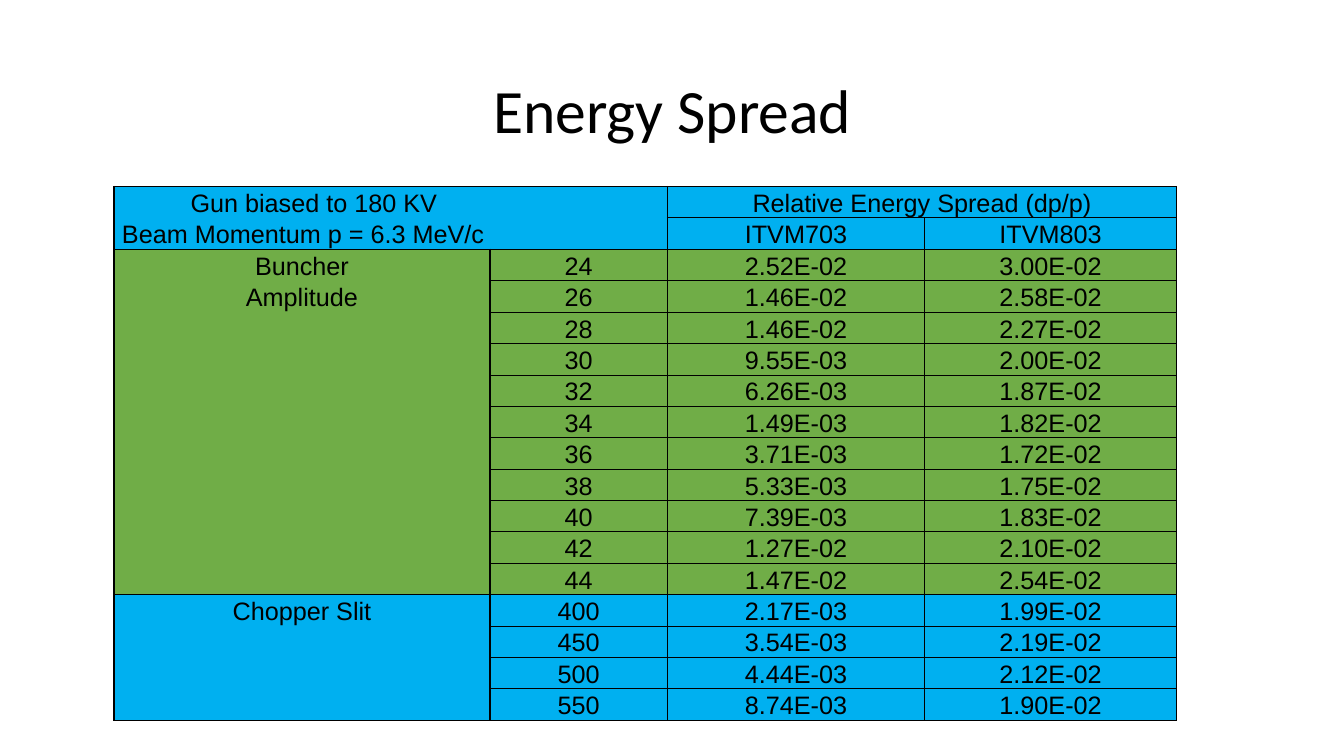
from dataclasses import dataclass

from lxml import etree
from pptx import Presentation
from pptx.dml.color import RGBColor
from pptx.enum.text import MSO_ANCHOR, PP_ALIGN
from pptx.oxml.ns import qn
from pptx.slide import Slide
from pptx.table import Table, _Cell
from pptx.util import Inches, Pt

LEFT, CENTER = PP_ALIGN.LEFT, PP_ALIGN.CENTER
MIDDLE, BOTTOM = MSO_ANCHOR.MIDDLE, MSO_ANCHOR.BOTTOM

BLACK = RGBColor(0x00, 0x00, 0x00)
BLUE = RGBColor(0x00, 0xB0, 0xF0)
GREEN = RGBColor(0x70, 0xAD, 0x47)

NONE, THIN, THICK = 0, 0.5, 1
COLUMN_WIDTHS = (3.73, 1.76, 2.55, 2.5)
TABLE_HEIGHT = 5.3
HEADER_ROWS = 2
CELL_MARGIN = 0.01


@dataclass(frozen=True)
class Borders:
    """Line widths in points, in the order the file format requires."""
    left: float = NONE
    right: float = NONE
    top: float = NONE
    bottom: float = NONE


@dataclass(frozen=True)
class Section:
    label_lines: tuple[str, ...]
    color: RGBColor
    rows: tuple[tuple[str, str, str], ...]


SECTIONS = (
    Section(("Buncher", "Amplitude"), GREEN, (
        ("24", "2.52E-02", "3.00E-02"),
        ("26", "1.46E-02", "2.58E-02"),
        ("28", "1.46E-02", "2.27E-02"),
        ("30", "9.55E-03", "2.00E-02"),
        ("32", "6.26E-03", "1.87E-02"),
        ("34", "1.49E-03", "1.82E-02"),
        ("36", "3.71E-03", "1.72E-02"),
        ("38", "5.33E-03", "1.75E-02"),
        ("40", "7.39E-03", "1.83E-02"),
        ("42", "1.27E-02", "2.10E-02"),
        ("44", "1.47E-02", "2.54E-02"),
    )),
    Section(("Chopper Slit",), BLUE, (
        ("400", "2.17E-03", "1.99E-02"),
        ("450", "3.54E-03", "2.19E-02"),
        ("500", "4.44E-03", "2.12E-02"),
        ("550", "8.74E-03", "1.90E-02"),
    )),
)
ROW_COUNT = HEADER_ROWS + sum(len(section.rows) for section in SECTIONS)


def set_borders(cell: _Cell, borders: Borders) -> None:
    properties = cell._tc.get_or_add_tcPr()
    sides = (("a:lnL", borders.left), ("a:lnR", borders.right),
             ("a:lnT", borders.top), ("a:lnB", borders.bottom))
    for tag, width in sides:
        line = etree.SubElement(properties, qn(tag), w=str(Pt(width)))
        if width == NONE:
            etree.SubElement(line, qn("a:noFill"))
        else:
            fill = etree.SubElement(line, qn("a:solidFill"))
            etree.SubElement(fill, qn("a:srgbClr"), val=str(BLACK))


def fill_cell(cell: _Cell, text: str, color: RGBColor, borders: Borders,
              alignment: PP_ALIGN = CENTER, left_margin: float = CELL_MARGIN) -> None:
    set_borders(cell, borders)
    cell.fill.solid()
    cell.fill.fore_color.rgb = color
    cell.vertical_anchor = BOTTOM
    cell.margin_left = Inches(left_margin)
    cell.margin_right = cell.margin_top = Inches(CELL_MARGIN)
    cell.margin_bottom = 0
    cell.text = text
    paragraph = cell.text_frame.paragraphs[0]
    paragraph.alignment = alignment
    paragraph.font.name = "Arial"
    paragraph.font.size = Pt(18)
    paragraph.font.color.rgb = BLACK


def add_title(slide: Slide) -> None:
    box = slide.shapes.add_textbox(Inches(0.92), Inches(0.4), Inches(11.5), Inches(1.45))
    frame = box.text_frame
    frame.word_wrap = True
    frame.vertical_anchor = MIDDLE
    paragraph = frame.paragraphs[0]
    paragraph.text = "Energy Spread"
    paragraph.alignment = CENTER
    paragraph.line_spacing = 0.9
    paragraph.font.name = "Calibri"
    paragraph.font.size = Pt(44)
    paragraph.font.color.rgb = BLACK


def fill_header(table: Table) -> None:
    conditions = Borders(left=THICK, right=THICK, top=THICK)
    spread = Borders(THICK, THICK, THICK, THICK)
    fill_cell(table.cell(0, 0), "Gun biased to 180 KV", BLUE, conditions, LEFT, 0.76)
    fill_cell(table.cell(0, 1), "", BLUE, conditions)
    fill_cell(table.cell(0, 2), "Relative Energy Spread (dp/p)", BLUE, spread)
    fill_cell(table.cell(0, 3), "", BLUE, spread)
    for column in (0, 2):
        table.cell(0, column).merge(table.cell(0, column + 1))

    fill_cell(table.cell(1, 0), "Beam Momentum p = 6.3 MeV/c", BLUE,
              Borders(left=THICK, bottom=THICK), LEFT, 0.08)
    fill_cell(table.cell(1, 1), "", BLUE, Borders(right=THICK, bottom=THICK))
    fill_cell(table.cell(1, 2), "ITVM703", BLUE, Borders(THICK, THIN, THICK, THIN))
    fill_cell(table.cell(1, 3), "ITVM803", BLUE, Borders(THIN, THICK, THICK, THIN))


def fill_section(table: Table, section: Section, first_row: int) -> None:
    last_index = len(section.rows) - 1
    for index, values in enumerate(section.rows):
        row = first_row + index
        label = section.label_lines[index] if index < len(section.label_lines) else ""
        fill_cell(table.cell(row, 0), label, section.color,
                  Borders(THICK, THICK,
                          THICK if index == 0 else NONE,
                          THICK if index == last_index else NONE))
        bottom = THICK if row == ROW_COUNT - 1 else THIN
        for column, value in enumerate(values, start=1):
            starts_body = row == HEADER_ROWS and column == 1
            fill_cell(table.cell(row, column), value, section.color,
                      Borders(THICK if column == 1 else THIN,
                              THICK if column == len(values) else THIN,
                              THICK if starts_body else THIN,
                              bottom))


def add_spread_table(slide: Slide) -> None:
    frame = slide.shapes.add_table(
        ROW_COUNT, len(COLUMN_WIDTHS), Inches(1.13), Inches(1.85),
        Inches(sum(COLUMN_WIDTHS)), Inches(TABLE_HEIGHT))
    table = frame.table
    table.first_row = False
    table.horz_banding = False
    for column, width in zip(table.columns, COLUMN_WIDTHS):
        column.width = Inches(width)
    fill_header(table)
    first_row = HEADER_ROWS
    for section in SECTIONS:
        fill_section(table, section, first_row)
        first_row += len(section.rows)


def main() -> None:
    presentation = Presentation()
    presentation.slide_width = Inches(13.33)
    presentation.slide_height = Inches(7.5)
    slide = presentation.slides.add_slide(presentation.slide_layouts[6])
    add_title(slide)
    add_spread_table(slide)
    presentation.save("out.pptx")


if __name__ == "__main__":
    main()
